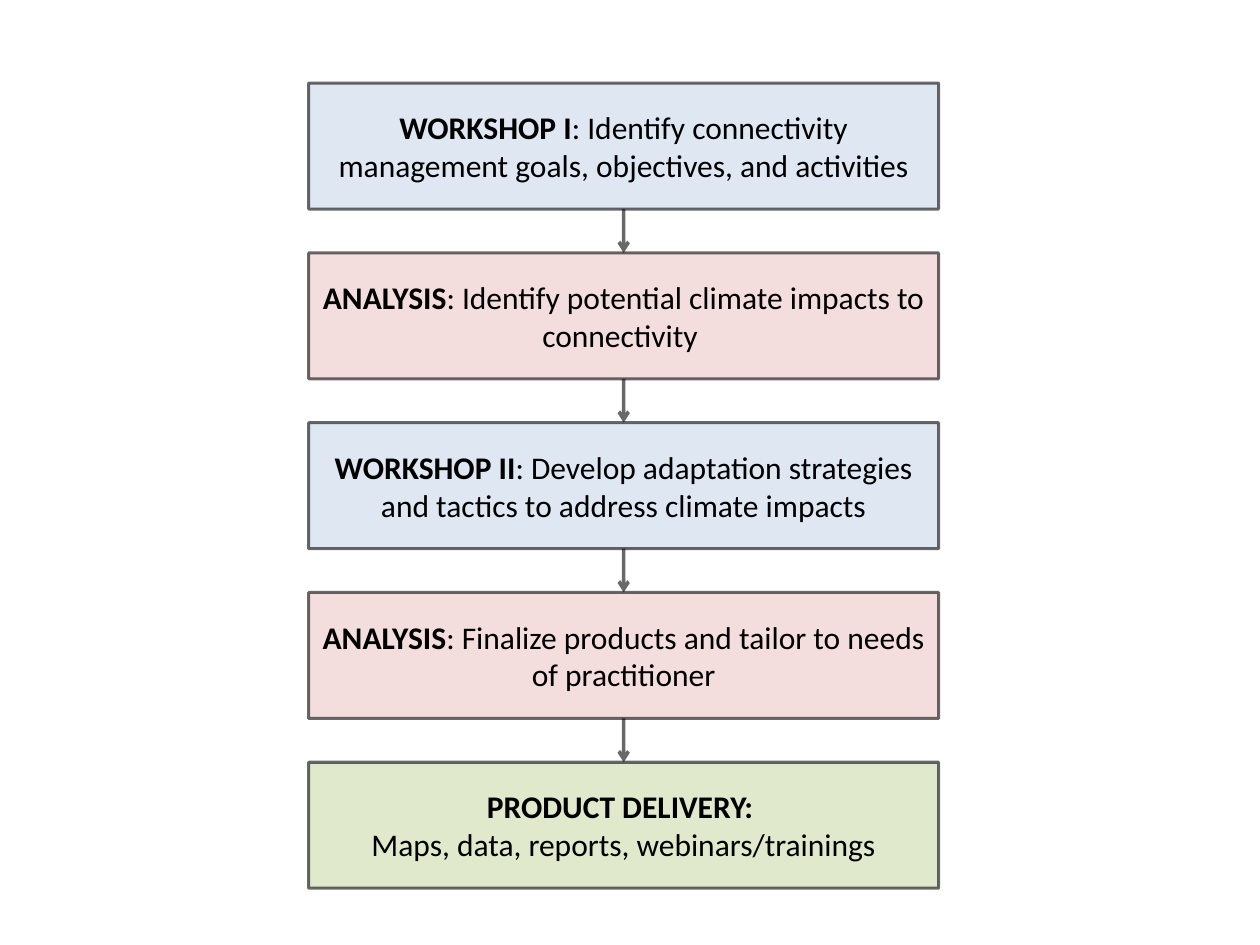
from lxml import etree
from pptx import Presentation
from pptx.dml.color import RGBColor
from pptx.enum.shapes import MSO_CONNECTOR, MSO_SHAPE
from pptx.enum.text import MSO_ANCHOR, PP_ALIGN
from pptx.oxml.ns import qn
from pptx.util import Inches, Pt

RECTANGLE = MSO_SHAPE.RECTANGLE
STRAIGHT = MSO_CONNECTOR.STRAIGHT
MIDDLE = MSO_ANCHOR.MIDDLE
CENTER = PP_ALIGN.CENTER
TOP_SIDE, BOTTOM_SIDE = 0, 2

COLORS = {
    "workshop": "95B3D7",
    "analysis": "D99694",
    "delivery": "9BBB59",
    "ink": "000000",
}

# Grid: ten columns across, seven and a half rows down
COLUMNS, ROWS = 10, 7.5
BOX_LEFT, BOX_WIDTH, BOX_HEIGHT = 2.45, 5, 1
FIRST_TOP, LAST_TOP = 0.66, 6.05

# Each step: colour name, then paragraphs of (text, bold) spans
STEPS = [
    ("workshop", [[("WORKSHOP I", True),
                   (": Identify connectivity management goals, objectives, and activities", False)]]),
    ("analysis", [[("ANALYSIS", True),
                   (": Identify potential climate impacts to connectivity ", False)]]),
    ("workshop", [[("WORKSHOP II", True),
                   (": Develop adaptation strategies and tactics to address climate impacts", False)]]),
    ("analysis", [[("ANALYSIS", True),
                   (": Finalize products and tailor to needs of practitioner", False)]]),
    ("delivery", [[("PRODUCT DELIVERY: ", True)],
                  [("Maps, data, reports, webinars/trainings", False)]]),
]


class FlowChart:
    """Holds the style and the current slide."""

    font_name = "Calibri"
    font_size = Pt(18)
    box_line = Pt(1.75)
    arrow_line = Pt(2)
    fill_opacity = 31
    line_opacity = 59

    def __init__(self, deck):
        self.page = deck.slides.add_slide(deck.slide_layouts[6])
        self.column = deck.slide_width / COLUMNS
        self.row = deck.slide_height / ROWS

    def paint(self, color_format, name):
        color_format.rgb = RGBColor.from_string(COLORS[name])

    def set_opacity(self, parent, percent):
        color = parent.find(f"{qn('a:solidFill')}/{qn('a:srgbClr')}")
        etree.SubElement(color, qn("a:alpha"), val=str(percent * 1000))

    def outline(self, shape, width):
        shape.line.width = width
        shape.line.fill.solid()
        self.paint(shape.line.color, "ink")
        line = shape.element.spPr.find(qn("a:ln"))
        self.set_opacity(line, self.line_opacity)
        return line

    def box(self, top, color, paragraphs):
        box = self.page.shapes.add_shape(
            RECTANGLE, round(BOX_LEFT * self.column), round(top * self.row),
            round(BOX_WIDTH * self.column), round(BOX_HEIGHT * self.row))
        box.shadow.inherit = False
        box.fill.solid()
        self.paint(box.fill.fore_color, color)
        self.set_opacity(box.element.spPr, self.fill_opacity)
        self.outline(box, self.box_line)
        self.label(box.text_frame, paragraphs)
        return box

    def label(self, frame, paragraphs):
        frame.word_wrap = True
        frame.vertical_anchor = MIDDLE
        for index, spans in enumerate(paragraphs):
            para = frame.add_paragraph() if index else frame.paragraphs[0]
            para.alignment = CENTER
            para.font.name = self.font_name
            para.font.size = self.font_size
            self.paint(para.font.color, "ink")
            for text, bold in spans:
                span = para.add_run()
                span.text = text
                span.font.bold = bold

    def arrow(self, upper, lower):
        arrow = self.page.shapes.add_connector(STRAIGHT, 0, 0, 0, 0)
        arrow.begin_connect(upper, BOTTOM_SIDE)
        arrow.end_connect(lower, TOP_SIDE)
        line = self.outline(arrow, self.arrow_line)
        etree.SubElement(line, qn("a:tailEnd"), type="arrow")
        etree.SubElement(arrow.element.spPr, qn("a:effectLst"))


def main():
    deck = Presentation()
    deck.slide_width, deck.slide_height = Inches(10), Inches(7.5)
    chart = FlowChart(deck)

    # Evenly spaced steps
    pitch = (LAST_TOP - FIRST_TOP) / (len(STEPS) - 1)
    boxes = [chart.box(FIRST_TOP + index * pitch, color, paragraphs)
             for index, (color, paragraphs) in enumerate(STEPS)]

    # Arrows from each step to the next
    for upper, lower in zip(boxes, boxes[1:]):
        chart.arrow(upper, lower)

    deck.save("out.pptx")


if __name__ == "__main__":
    main()
